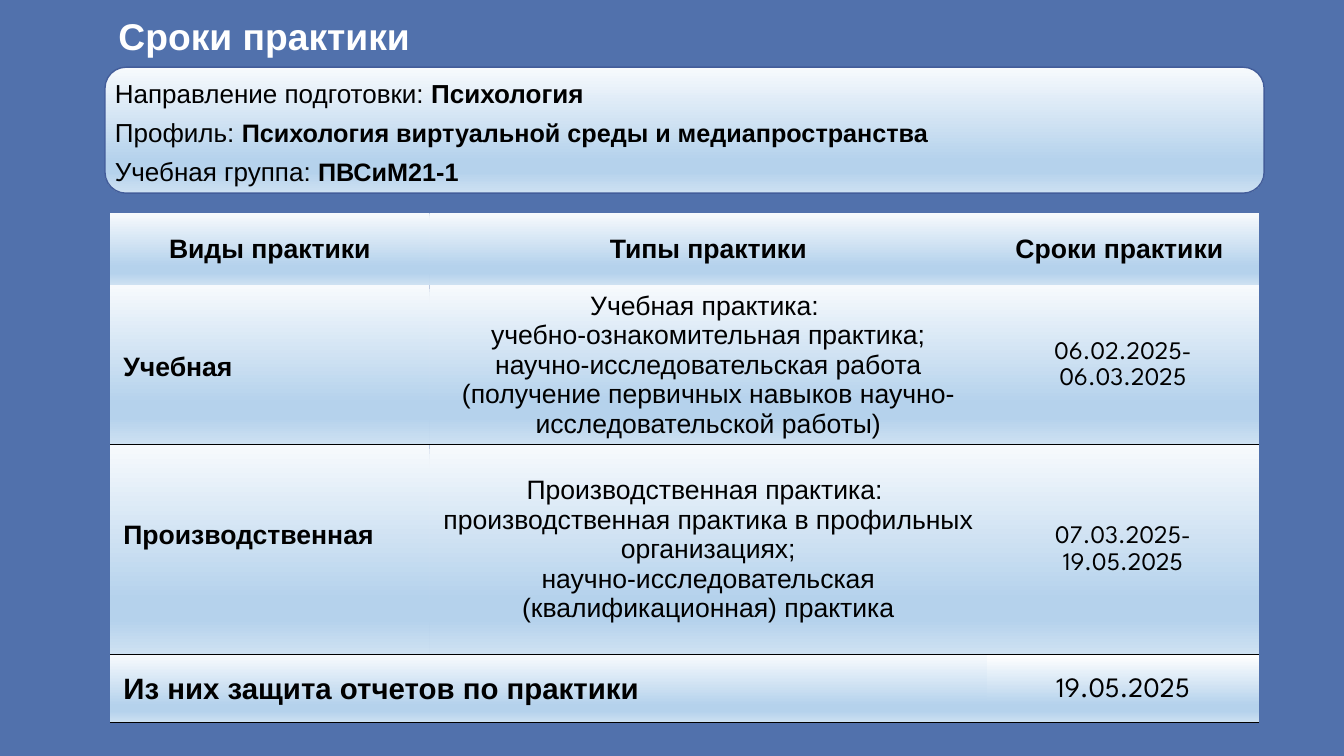
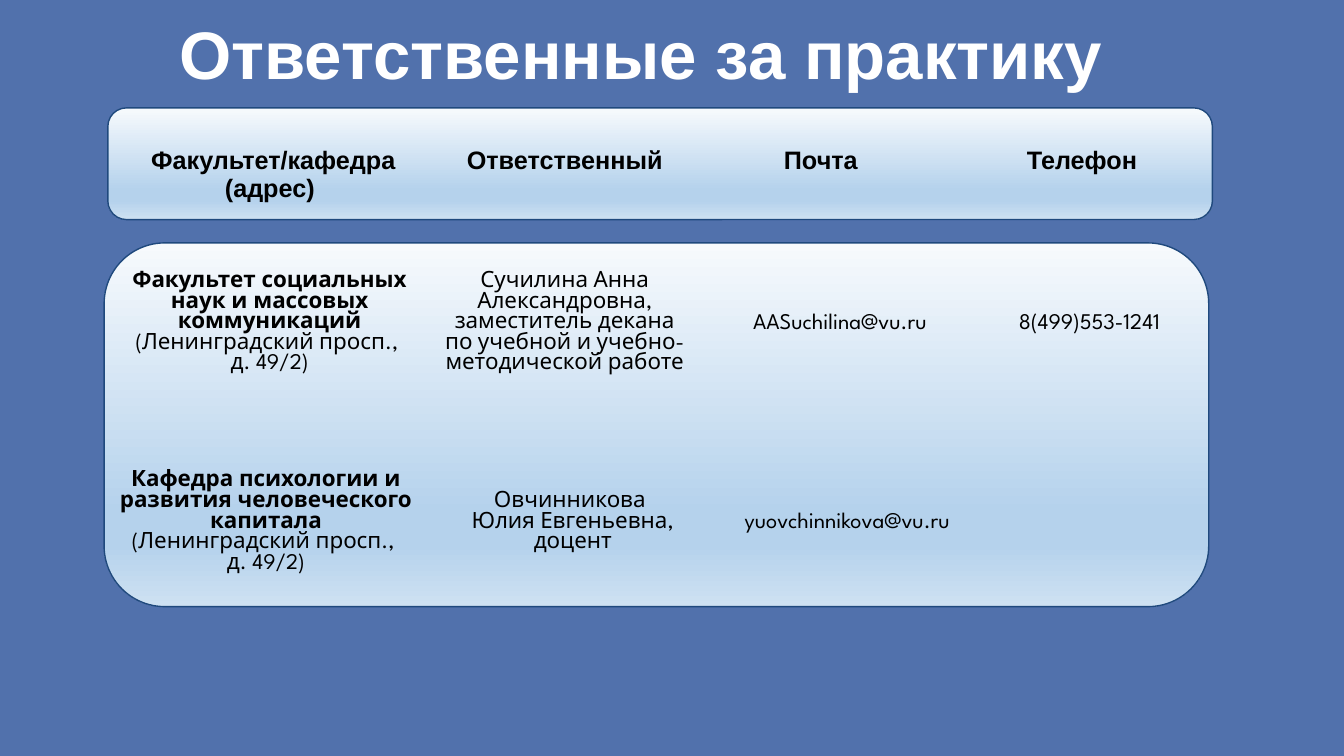
from dataclasses import dataclass, replace
from pptx import Presentation
from pptx import util as u
from pptx.dml import color
from pptx.enum import shapes, text
from pptx.oxml import ns
from lxml import etree

UNIT = u.Inches(1) / 12
COLS, ROWS = 160, 90
MID, TOP = text.MSO_ANCHOR.MIDDLE, text.MSO_ANCHOR.TOP
LEFT, MEAN = text.PP_ALIGN.LEFT, text.PP_ALIGN.CENTER


@dataclass(frozen=True)
class Theme:
    back: str = "5171AC"
    ink: str = "000000"
    white: str = "FFFFFF"
    pale: str = "F7FAFD"
    fade: tuple = ((74, "B5D2EC"), (83, "B5D2EC"), (100, "CEE1F2"))
    edge: str = "435D9A"
    navy: str = "1F497D"
    sans: str = "Arial"
    round: str = "League Spartan"
    plain: str = "{2D5ABB26-0587-4C30-8999-92F81FD0307C}"


T = Theme()


@dataclass(frozen=True)
class Look:
    size: float
    font: str = T.sans
    ink: str = T.ink
    align: int = MEAN
    space: float = 1.0
    pad: tuple = (1.2, 1.2, 1.2, 1.2)
    anchor: int = MID
    pale: str = T.pale


WIDE = (1.6, 1.6, 1.6, 1.6)
FLAT = (1.2, 0, 1.2, 0)
TITLE = Look(26.6, ink=T.white, align=LEFT, pad=WIDE)
BIG = replace(TITLE, size=48, space=0.9, pad=(1.2, 1.2, 1.2, 1.2))
INFO = Look(18.6, align=LEFT, space=1.25, pad=(1.2, 0.6, 1.2, 0.6), anchor=TOP)
HEAD = Look(19, pad=WIDE)
KIND = replace(HEAD, align=LEFT, space=1.14)
HIGH = replace(KIND, pad=(1.6, 1.6, 1.6, 5.4))
TYPE = replace(HEAD, pad=FLAT)
DATE = replace(HEAD, size=18, font=T.round, space=1.14)
TOTAL = replace(HEAD, size=21, align=LEFT)
FINAL = replace(DATE, size=20, pad=FLAT, pale=T.white)
LABEL = Look(18, pad=(1.2, 4, 1.2, 1.2), anchor=TOP)
BLANK = Look(18)
ENTRY = Look(16, font=T.round)
FULL = replace(ENTRY, pad=(0.8, 1.2, 0.8, 0.6), anchor=TOP)
PHONE = replace(ENTRY, pad=(1.2, 6.16, 1.2, 0.6), anchor=TOP)
MAIL = replace(PHONE, pad=(4, 6.16, 1.2, 0.6))


def grid(*lens):
    return [round(n * UNIT) for n in lens]


def rgb(code):
    return color.RGBColor.from_string(code)


def blend(fill, node, pale):
    fill.gradient()
    fill.gradient_angle = 270
    stops = next(node.iter(ns.qn("a:gsLst")))
    for old in list(stops):
        stops.remove(old)
    for pos, code in ((0, pale),) + T.fade:
        stop = etree.SubElement(stops, ns.qn("a:gs"), pos=str(pos * 1000))
        etree.SubElement(stop, ns.qn("a:srgbClr"), val=code)


def rule(cell, side):
    line = etree.Element(ns.qn(side), w=str(u.Pt(1)))
    fill = etree.SubElement(line, ns.qn("a:solidFill"))
    etree.SubElement(fill, ns.qn("a:srgbClr"), val=T.ink)
    cell._tc.get_or_add_tcPr().insert(0, line)


def write(frame, words, look):
    lines = words.split("\n")
    frame.text = "\n".join(lines)
    for para, line in zip(frame.paragraphs, lines):
        para.alignment = look.align
        para.line_spacing = look.space
        parts = [(n % 2 == 1, t) for n, t in enumerate(line.split("*")) if t]
        para.text = parts[0][1] if parts else ""
        for _, part in parts[1:]:
            para.add_run().text = part
        for run, (bold, _) in zip(para.runs, parts):
            font = run.font
            font.name, font.size, font.bold = look.font, u.Pt(look.size), bold
            font.color.rgb = rgb(look.ink)


def inset(item, look):
    (item.margin_left, item.margin_top,
     item.margin_right, item.margin_bottom) = grid(*look.pad)
    item.vertical_anchor = look.anchor


def label(slide, box, words, look):
    frame = slide.shapes.add_textbox(*grid(*box)).text_frame
    frame.word_wrap = True
    inset(frame, look)
    write(frame, words, look)
    return frame


def card(slide, box, edge):
    shape = slide.shapes.add_shape(
        shapes.MSO_SHAPE.ROUNDED_RECTANGLE, *grid(*box))
    shape.shadow.inherit = False
    blend(shape.fill, shape._element, T.pale)
    shape.line.color.rgb = rgb(edge)
    shape.line.width = u.Pt(1)


def table(slide, box, cols, rows, cells, ruled=(), filled=False):
    wide, high = box[2:]
    item = slide.shapes.add_table(len(rows), len(cols), *grid(*box)).table
    item.first_row = item.horz_banding = False
    next(item._tbl.iter(ns.qn("a:tableStyleId"))).text = T.plain
    for col, part in zip(item.columns, cols):
        col.width = grid(wide * part / sum(cols))[0]
    for row, part in zip(item.rows, rows):
        row.height = grid(high * part / sum(rows))[0]
    for r, line in enumerate(cells):
        for c, (words, look) in enumerate(line):
            cell = item.cell(r, c)
            inset(cell, look)
            write(cell.text_frame, words, look)
            if filled:
                blend(cell.fill, cell._tc, look.pale)
            else:
                cell.fill.background()
            if r in ruled:
                rule(cell, "a:lnB")
            if r - 1 in ruled:
                rule(cell, "a:lnT")


def page(deck):
    slide = deck.slides.add_slide(deck.slide_layouts[6])
    slide.background.fill.solid()
    slide.background.fill.fore_color.rgb = rgb(T.back)
    return slide


def group(slide, box):
    card(slide, box, T.edge)
    x, y, w, h = box
    frame = label(
        slide, (x, y - 0.3, w, h + 0.3),
        "Направление подготовки: *Психология\n"
        "Профиль: *Психология виртуальной среды и медиапространства\n"
        "Учебная группа: *ПВСиМ21-1", INFO)
    for para in frame.paragraphs[1:]:
        para.runs[1].font.size = u.Pt(18)


def terms(slide, box):
    x, y, w, h = box
    kinds = [
        [("*Виды практики", HEAD), ("*Типы практики", HEAD),
         ("*Сроки практики ", HEAD)],
        [("*Учебная", KIND),
         ("Учебная практика: \nучебно-ознакомительная практика;\n"
          "научно-исследовательская работа (получение первичных навыков "
          "научно-исследовательской работы)", TYPE),
         ("06.02.2025-06.03.2025", DATE)],
        [("*Производственная", HIGH),
         ("Производственная практика: \n"
          "производственная практика в профильных организациях;\n"
          "научно-исследовательская (квалификационная) практика", TYPE),
         ("07.03.2025-19.05.2025", DATE)],
    ]
    table(slide, (x, y, w, h - 8.3), (3.17, 5.53, 2.7), (0.72, 1.57, 2.08),
          kinds, (1, 2), True)
    table(slide, (x, y + h - 8, w, 8), (8.7, 2.7), (1,),
          [[("*Из них защита отчетов по практики", TOTAL),
            ("19.05.2025", FINAL)]], (0,), True)


def header(slide, box):
    card(slide, box, T.navy)
    x, y, w, h = box
    names = ("* Факультет/кафедра*\n*(адрес)", "*Ответственный",
             "*Почта", "*Телефон")
    table(slide, (x - 0.4, y + 0.6, w + 0.9, 20.64), (3.28, 2.57, 2.51, 2.67),
          (1.24, 0.48),
          [[(name, LABEL) for name in names], [("", BLANK)] * len(names)])


def people(slide, box):
    card(slide, box, T.navy)
    x, y, w, h = box
    place = "\n(Ленинградский просп., \nд. 49/2)"
    table(slide, (x, y + 2.28, w + 1, 14.64), (3.28, 2.57, 2.65, 2.53), (1,),
          [[("*Факультет социальных наук и массовых коммуникаций*" + place,
             FULL),
            ("Сучилина Анна Александровна, заместитель декана "
             "по учебной и учебно-методической работе", FULL),
            ("AASuchilina@vu.ru", MAIL), ("8(499)553-1241", PHONE)]])
    table(slide, (x - 0.4, y + 23.4, w + 0.9, 19.8),
          (3.28, 2.81, 2.64, 2.31), (1,),
          [[("*Кафедра психологии и развития человеческого капитала*" + place,
             ENTRY),
            ("Овчинникова \nЮлия Евгеньевна, доцент", ENTRY),
            ("yuovchinnikova@vu.ru", ENTRY), ("", ENTRY)]])


def dates(deck):
    slide = page(deck)
    group(slide, (12.5, 8, 138, 15))
    label(slide, (12.5, 0, 134.8, 8.6), "*Сроки практики", TITLE)
    terms(slide, (13.1, 25.32, 136.8, 60.7))


def staff(deck):
    slide = page(deck)
    people(slide, (12.4, 28.92, 131.5, 43.3))
    header(slide, (12.84, 12.84, 131.5, 13.3))
    label(slide, (20.16, 1.5, 134.8, 10.7), "*Ответственные за практику", BIG)


def main():
    deck = Presentation()
    deck.slide_width, deck.slide_height = grid(COLS, ROWS)
    dates(deck)
    staff(deck)
    deck.save("out.pptx")


if __name__ == "__main__":
    main()
